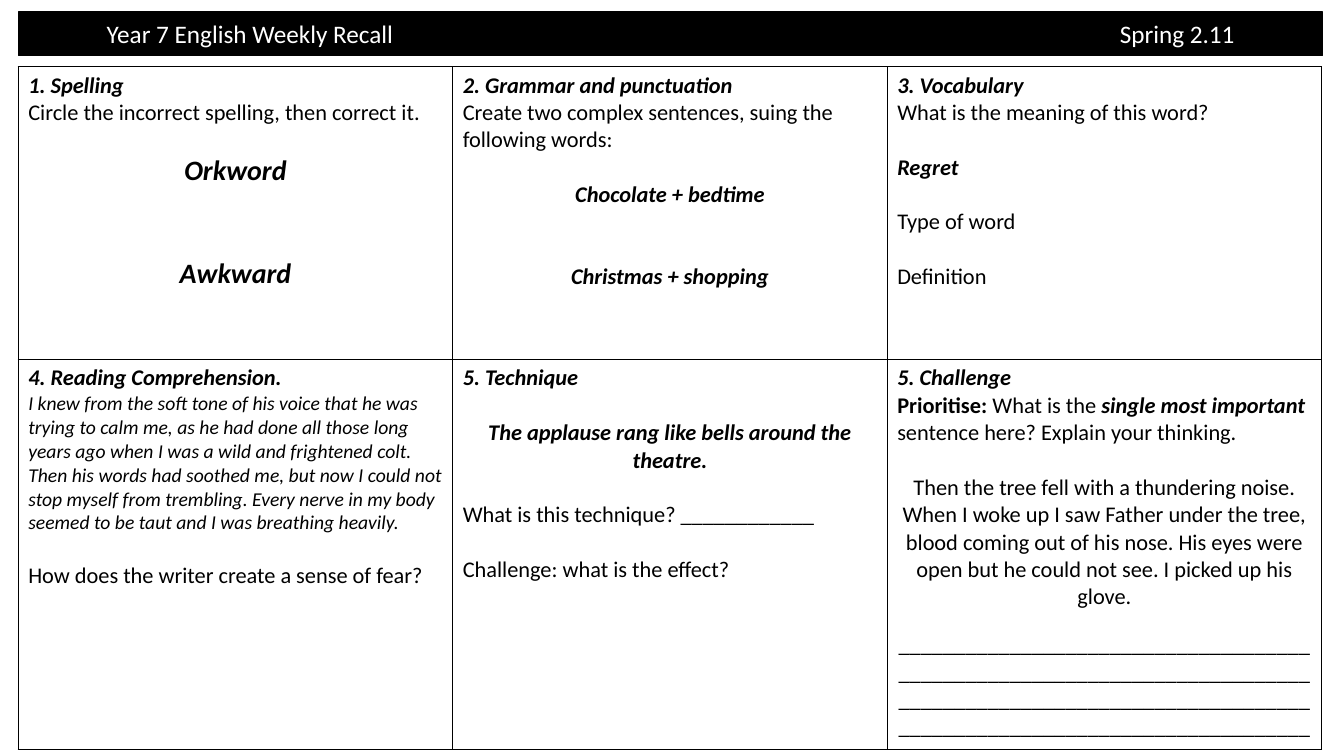
from lxml.etree import SubElement
from pptx import Presentation
from pptx.dml.color import RGBColor
from pptx.enum.text import MSO_ANCHOR, MSO_AUTO_SIZE, PP_ALIGN
from pptx.oxml.ns import qn
from pptx.util import Cm, Pt

BLACK, WHITE = "000000", "FFFFFF"
LEFT, CENTER = PP_ALIGN.LEFT, PP_ALIGN.CENTER
PLAIN, BOLD, ITALIC, STRONG = (False, False), (True, False), (False, True), (True, True)
LINE = 19.5  # height in points of one line of 16 pt text


def color(hex_string):
    return RGBColor.from_string(hex_string)


def add_run(paragraph, text, size, style, hex_string):
    run = paragraph.add_run()
    run.text = text
    font = run.font
    font.name, font.size = "Calibri", Pt(size)
    font.bold, font.italic = style
    font.color.rgb = color(hex_string)


presentation = Presentation()
presentation.slide_width, presentation.slide_height = Cm(33.87), Cm(19.05)
slide = presentation.slides.add_slide(presentation.slide_layouts[5])

# Title bar
title = slide.shapes.title
title.left, title.top, title.width, title.height = Cm(0.46), Cm(0.3), Cm(32.87), Cm(1.1)
title.fill.solid()
title.fill.fore_color.rgb = color(BLACK)
title.line.color.rgb = color(BLACK)
title.line.width = Pt(1)
frame = title.text_frame
frame.auto_size = MSO_AUTO_SIZE.NONE
frame.vertical_anchor = MSO_ANCHOR.MIDDLE
frame.margin_left = Cm(2.23)
paragraph = frame.paragraphs[0]
paragraph.alignment = LEFT
add_run(paragraph, "Year 7 English Weekly Recall\tSpring 2.11", 18, PLAIN, WHITE)
tab_list = SubElement(paragraph._p.get_or_add_pPr(), qn("a:tabLst"))
SubElement(tab_list, qn("a:tab"), pos=str(Cm(25.53)), algn="l")

# Tasks: heading, then paragraphs of (space before, alignment, size, runs)
tasks = [
    [
        ("1. Spelling", [
            (0, LEFT, 16, [("Circle the incorrect spelling, then correct it.", PLAIN)]),
            (LINE, CENTER, 20, [("Orkword", STRONG)]),
            (2.5 * LINE, CENTER, 20, [("Awkward", STRONG)]),
        ]),
        ("2. Grammar and punctuation", [
            (0, LEFT, 16, [("Create two complex sentences, suing the following words:", PLAIN)]),
            (LINE, CENTER, 16, [("Chocolate + bedtime", STRONG)]),
            (2 * LINE, CENTER, 16, [("Christmas + shopping", STRONG)]),
        ]),
        ("3. Vocabulary", [
            (0, LEFT, 16, [("What is the meaning of this word?", PLAIN)]),
            (LINE, LEFT, 16, [("Regret", STRONG)]),
            (LINE, LEFT, 16, [("Type of word", PLAIN)]),
            (LINE, LEFT, 16, [("Definition", PLAIN)]),
        ]),
    ],
    [
        ("4. Reading Comprehension.", [
            (0, LEFT, 14, [(
                "I knew from the soft tone of his voice that he was trying to calm me, "
                "as he had done all those long years ago when I was a wild and frightened colt. "
                "Then his words had soothed me, but now I could not stop myself from trembling. "
                "Every nerve in my body seemed to be taut and I was breathing heavily.", ITALIC)]),
            (LINE, LEFT, 16, [("How does the writer create a sense of fear?", PLAIN)]),
        ]),
        ("5. Technique", [
            (LINE, CENTER, 16, [("The applause rang like bells around the theatre.", STRONG)]),
            (LINE, LEFT, 16, [("What is this technique? " + "_" * 12, PLAIN)]),
            (LINE, LEFT, 16, [("Challenge: what is the effect?", PLAIN)]),
        ]),
        ("5. Challenge", [
            (0, LEFT, 16, [
                ("Prioritise: ", BOLD),
                ("What is the ", PLAIN),
                ("single most important ", STRONG),
                ("sentence here? Explain your thinking.", PLAIN),
            ]),
            (LINE, CENTER, 16, [(
                "Then the tree fell with a thundering noise. When I woke up I saw Father "
                "under the tree, blood coming out of his nose. His eyes were open but he "
                "could not see. I picked up his glove.", PLAIN)]),
            (0.75 * LINE, CENTER, 16, [("_" * 148, PLAIN)]),
        ]),
    ],
]

table = slide.shapes.add_table(2, 3, Cm(0.46), Cm(1.68), Cm(32.87), Cm(17.2)).table
table.first_row = table.horz_banding = False
for column in table.columns:
    column.width = Cm(10.95)
for row, height in zip(table.rows, (7.38, 9.82)):
    row.height = Cm(height)

for row, row_tasks in zip(table.rows, tasks):
    for cell, (heading, paragraphs) in zip(row.cells, row_tasks):
        for side in ("lnL", "lnR", "lnT", "lnB"):
            border = SubElement(cell._tc.get_or_add_tcPr(), qn(f"a:{side}"), w=str(Pt(1)))
            border_fill = SubElement(border, qn("a:solidFill"))
            SubElement(border_fill, qn("a:srgbClr"), val=BLACK)
        cell.fill.background()
        frame = cell.text_frame
        add_run(frame.paragraphs[0], heading, 16, STRONG, BLACK)
        for space, alignment, size, runs in paragraphs:
            paragraph = frame.add_paragraph()
            paragraph.alignment = alignment
            paragraph.space_before = Pt(space)
            for text, style in runs:
                add_run(paragraph, text, size, style, BLACK)

presentation.save("out.pptx")
